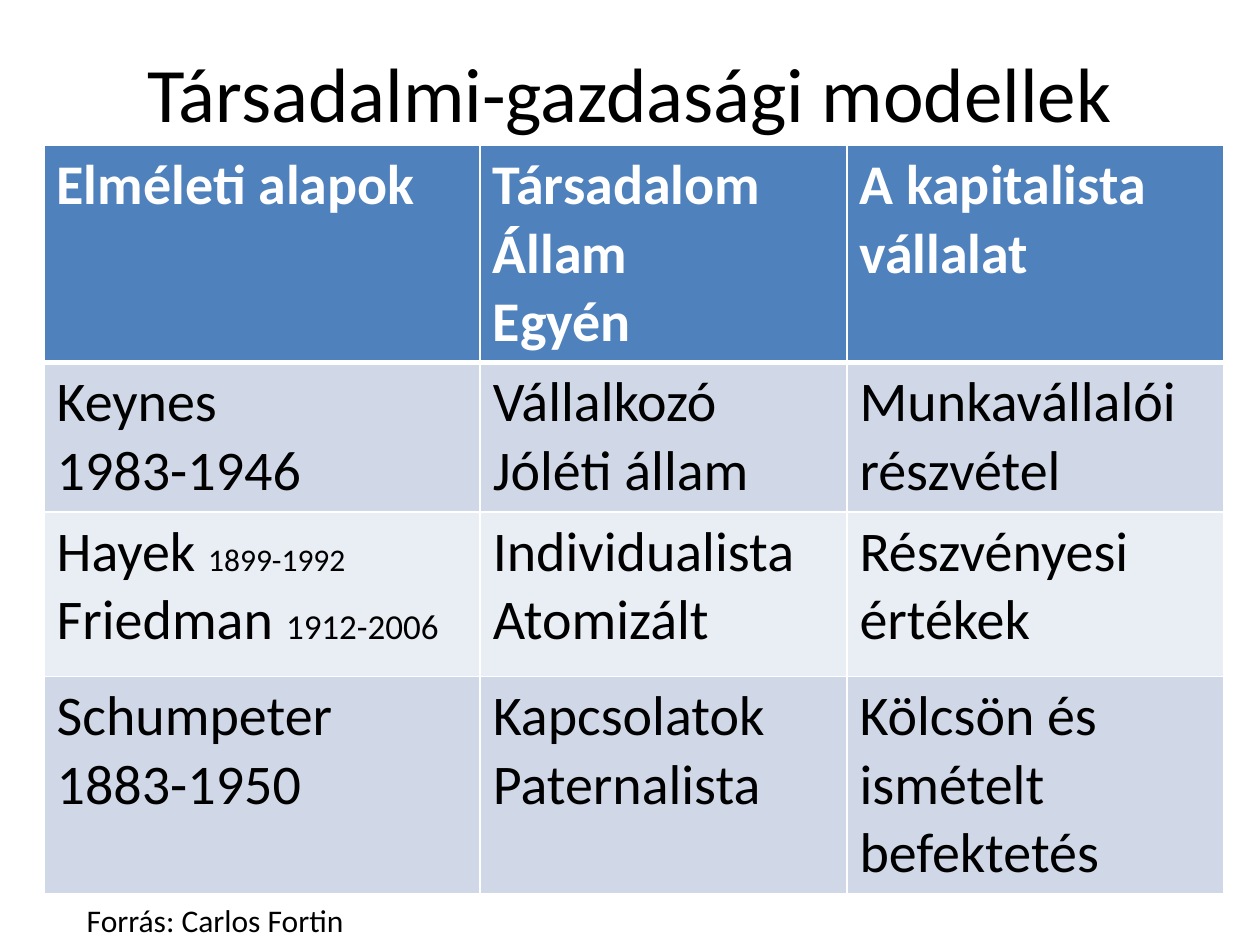
from lxml import etree
from pptx import Presentation
from pptx.dml.color import RGBColor
from pptx.enum.text import MSO_ANCHOR, PP_ALIGN
from pptx.oxml.ns import qn
from pptx.util import Pt

LEFT, CENTER = PP_ALIGN.LEFT, PP_ALIGN.CENTER
TOP, MIDDLE = MSO_ANCHOR.TOP, MSO_ANCHOR.MIDDLE
WHITE = RGBColor(0xFF, 0xFF, 0xFF)
BLACK = RGBColor(0, 0, 0)
HEADER_BLUE = RGBColor(0x4F, 0x81, 0xBD)
BANDS = RGBColor(0xD0, 0xD8, 0xE8), RGBColor(0xE9, 0xED, 0xF4)

COLUMN_WIDTHS = 249.2, 209.6, 215.2
ROW_HEIGHTS = 124, 85.5, 94, 124
# A cell is a list of paragraphs; a tuple is a name with its years in small type.
ROWS = [
    [["Elméleti alapok"], ["Társadalom", "Állam", "Egyén"], ["A kapitalista vállalat"]],
    [["Keynes", "1983-1946"], ["Vállalkozó", "Jóléti állam"], ["Munkavállalói részvétel"]],
    [[("Hayek ", "1899-1992", 18), ("Friedman ", "1912-2006", 20)],
     ["Individualista", "Atomizált"], ["Részvényesi értékek"]],
    [["Schumpeter", "1883-1950"], ["Kapcsolatok", "Paternalista"],
     ["Kölcsön és ismételt befektetés"]],
]


class PageBuilder:
    font = "Calibri"
    cell_size = 32

    def __init__(self, page):
        self.page = page

    def style(self, span, size, color=BLACK, bold=False):
        span.font.name = self.font
        span.font.size = Pt(size)
        span.font.color.rgb = color
        span.font.bold = bold

    def text(self, words, left, top, width, height, size, align=LEFT, anchor=TOP, wrap=True):
        box = self.page.shapes.add_textbox(Pt(left), Pt(top), Pt(width), Pt(height))
        frame = box.text_frame
        frame.text = words
        frame.word_wrap = wrap
        frame.vertical_anchor = anchor
        para = frame.paragraphs[0]
        para.alignment = align
        self.style(para.runs[0], size)

    def borders(self, cell, bottom):
        """Draw white cell edges; they must precede the fill in the XML."""
        properties = cell._tc.get_or_add_tcPr()
        for index, (side, width) in enumerate(
                (("L", 1), ("R", 1), ("T", 1), ("B", bottom))):
            line = etree.Element(qn(f"a:ln{side}"), w=str(Pt(width)))
            fill = etree.SubElement(line, qn("a:solidFill"))
            etree.SubElement(fill, qn("a:srgbClr"), val=str(WHITE))
            properties.insert(index, line)

    def cell(self, cell, lines, fill, color, bold, bottom):
        cell.fill.solid()
        cell.fill.fore_color.rgb = fill
        self.borders(cell, bottom)
        frame = cell.text_frame
        frame.text = "\n".join(line if isinstance(line, str) else line[0] for line in lines)
        for para, line in zip(frame.paragraphs, lines):
            self.style(para.runs[0], self.cell_size, color, bold)
            if isinstance(line, tuple):
                years = para.add_run()
                years.text = line[1]
                self.style(years, line[2], color, bold)

    def table(self, rows, left, top, widths, heights):
        frame = self.page.shapes.add_table(
            len(rows), len(widths), Pt(left), Pt(top), Pt(sum(widths)), Pt(sum(heights)))
        table = frame.table
        for column, width in zip(table.columns, widths):
            column.width = Pt(width)
        for index, (row, height) in enumerate(zip(rows, heights)):
            table.rows[index].height = Pt(height)
            header = index == 0
            fill = HEADER_BLUE if header else BANDS[(index - 1) % 2]
            for column, lines in enumerate(row):
                self.cell(table.cell(index, column), lines, fill,
                          WHITE if header else BLACK, header, 3 if header else 1)


def main():
    deck = Presentation()
    deck.slide_width, deck.slide_height = Pt(720), Pt(540)
    page = deck.slides.add_slide(deck.slide_layouts[6])
    builder = PageBuilder(page)
    builder.text("Társadalmi-gazdasági modellek", 36, 21.6, 648, 61.2, 44, CENTER, MIDDLE)
    builder.table(ROWS, 25.2, 83, COLUMN_WIDTHS, ROW_HEIGHTS)
    builder.text("Forrás: Carlos Fortin", 42.5, 511.2, 162.7, 28.8, 18, wrap=False)
    deck.save("out.pptx")


if __name__ == "__main__":
    main()
